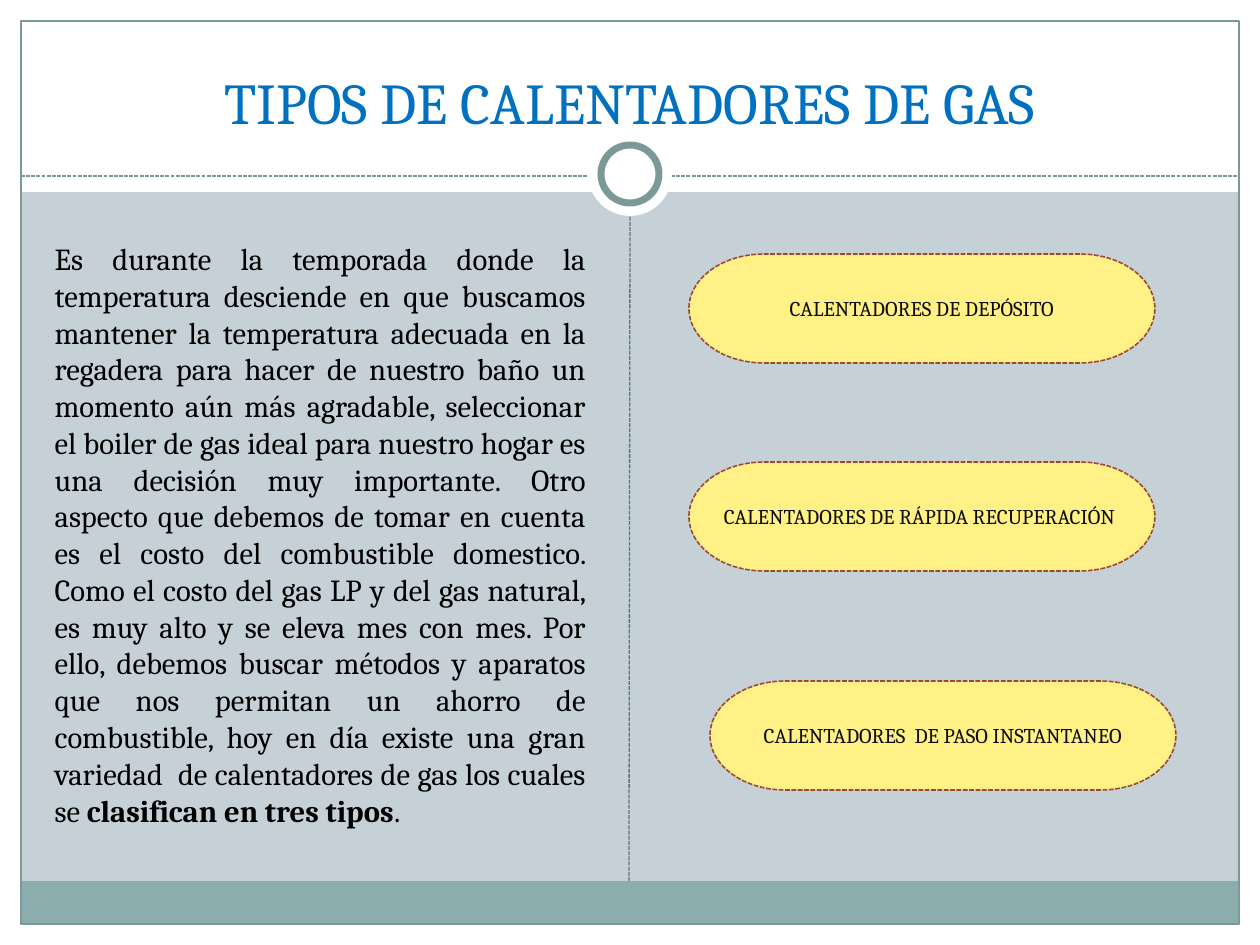
from lxml import etree
from pptx import Presentation
from pptx.dml.color import RGBColor
from pptx.enum.dml import MSO_LINE
from pptx.enum.shapes import MSO_CONNECTOR, MSO_SHAPE
from pptx.enum.text import MSO_ANCHOR, MSO_AUTO_SIZE, PP_ALIGN
from pptx.oxml.ns import qn
from pptx.util import Emu, Pt

RECT, OVAL, PILL = MSO_SHAPE.RECTANGLE, MSO_SHAPE.OVAL, MSO_SHAPE.FLOWCHART_TERMINATOR
CENTER, JUSTIFY = PP_ALIGN.CENTER, PP_ALIGN.JUSTIFY
DASH = MSO_LINE.SQUARE_DOT

THEME = {
    "font": "Cambria", "title_pt": 33, "body_pt": 17.5, "body_line_pt": 21, "type_pt": 12,
    "paper": "C5D1D7", "white": "FFFFFF", "band": "8CADAE", "frame": "7C999A",
    "divider": "646B86", "title": "0070C0", "body": "000000",
    "pill": "FFF185", "pill_line": "9B4936", "pill_text": "0D0D0D",
}

TITLE = "TIPOS DE CALENTADORES DE GAS"
BODY = [
    ("Es durante la temporada donde la temperatura desciende en que buscamos mantener "
     "la temperatura adecuada en la regadera para hacer de nuestro baño un momento aún "
     "más agradable, seleccionar el boiler de gas ideal para nuestro hogar es una decisión "
     "muy importante. Otro aspecto que debemos de tomar en cuenta es el costo del "
     "combustible domestico. Como el costo del gas LP y del gas natural, es muy alto y se "
     "eleva mes con mes. Por ello, debemos buscar métodos y aparatos que nos permitan un "
     "ahorro de combustible, hoy en día existe una gran variedad  de calentadores de gas "
     "los cuales se ", False),
    ("clasifican en tres tipos", True),
    (".", False),
]
TYPES = [  # text, left, top
    ("CALENTADORES DE DEPÓSITO", 689, 254),
    ("CALENTADORES DE RÁPIDA RECUPERACIÓN ", 689, 462),
    ("CALENTADORES  DE PASO INSTANTANEO", 710, 681),
]

W, H, MARGIN = 1260, 945, 21
HEADER_H, RULE_Y, BAND_H = 192, 176, 43
RING_X, RING_Y = W // 2, 174
PILL_W, PILL_H = 466, 109


def px(n):
    return Emu(round(n * 914400 / 126))


def rgb(name):
    return RGBColor.from_string(THEME[name])


def set_line(line, color, width, dash=None):
    line.color.rgb = rgb(color)
    line.width = Pt(width)
    if dash is not None:
        line.dash_style = dash


def add_shape(s, kind, box, fill=None, line=None):
    """Add a flat shape; line is (colour, points[, dash])."""
    sp = s.shapes.add_shape(kind, *map(px, box))
    sp.shadow.inherit = False
    if fill:
        sp.fill.solid()
        sp.fill.fore_color.rgb = rgb(fill)
    else:
        sp.fill.background()
    if line:
        set_line(sp.line, *line)
    else:
        sp.line.fill.background()
    return sp


def add_circle(s, diameter, line=None):
    box = (RING_X - diameter / 2, RING_Y - diameter / 2, diameter, diameter)
    add_shape(s, OVAL, box, "white", line)


def add_dashed(s, points, color):
    c = s.shapes.add_connector(MSO_CONNECTOR.STRAIGHT, *map(px, points))
    set_line(c.line, color, 0.75, DASH)
    etree.SubElement(c.element.spPr, qn("a:effectLst"))


def write(sp, runs, align, size, color, **frame):
    tf = sp.text_frame
    settings = {"word_wrap": True, "auto_size": MSO_AUTO_SIZE.NONE, **frame}
    for key, value in settings.items():
        setattr(tf, key, value)
    p = tf.paragraphs[0]
    p.alignment, p.space_before = align, Pt(0)
    for text, bold in runs:
        r = p.add_run()
        r.text = text
        for key, value in {"name": THEME["font"], "size": Pt(THEME[size]), "bold": bold}.items():
            setattr(r.font, key, value)
        r.font.color.rgb = rgb(color)
    return p


def place(sp, box):
    """Move a placeholder and bring it to the front."""
    sp.left, sp.top, sp.width, sp.height = map(px, box)
    sp.element.getparent().append(sp.element)


def add_backdrop(s):
    s.background.fill.solid()
    s.background.fill.fore_color.rgb = rgb("paper")
    inner_w, inner_h = W - 2 * MARGIN, H - 2 * MARGIN
    band_top = H - MARGIN - BAND_H
    for box in [(0, H - MARGIN, W, MARGIN), (0, 0, W, HEADER_H),
                (0, 0, MARGIN, H), (W - MARGIN, 0, MARGIN, H)]:
        add_shape(s, RECT, box, "white")
    add_shape(s, RECT, (MARGIN, band_top, inner_w, BAND_H), "band")
    add_shape(s, RECT, (MARGIN, MARGIN, inner_w, inner_h), line=("frame", 0.75))
    add_dashed(s, (MARGIN, RULE_Y, W - MARGIN, RULE_Y), "frame")
    add_circle(s, 84)
    add_circle(s, 58, ("frame", 4))
    add_dashed(s, (RING_X - 1, band_top, RING_X, 217), "divider")


def main():
    prs = Presentation()
    prs.slide_width, prs.slide_height = px(W), px(H)
    s = prs.slides.add_slide(prs.slide_layouts[1])
    add_backdrop(s)

    title, body = s.shapes.title, s.placeholders[1]
    place(title, (42, 31, 1176, 105))
    write(title, [(TITLE, False)], CENTER, "title_pt", "title",
          vertical_anchor=MSO_ANCHOR.BOTTOM, margin_bottom=0)

    place(body, (42, 189, 557, 645))
    p = write(body, BODY, JUSTIFY, "body_pt", "body",
              vertical_anchor=MSO_ANCHOR.TOP, margin_top=px(51))
    p.line_spacing = Pt(THEME["body_line_pt"])
    pPr = p._p.get_or_add_pPr()
    pPr.set("marL", "0")
    pPr.set("indent", "0")
    etree.SubElement(pPr, qn("a:buNone"))

    for text, left, top in TYPES:
        pill = add_shape(s, PILL, (left, top, PILL_W, PILL_H), "pill", ("pill_line", 0.9, DASH))
        write(pill, [(text, False)], CENTER, "type_pt", "pill_text",
              vertical_anchor=MSO_ANCHOR.MIDDLE)

    prs.save("out.pptx")


if __name__ == "__main__":
    main()
